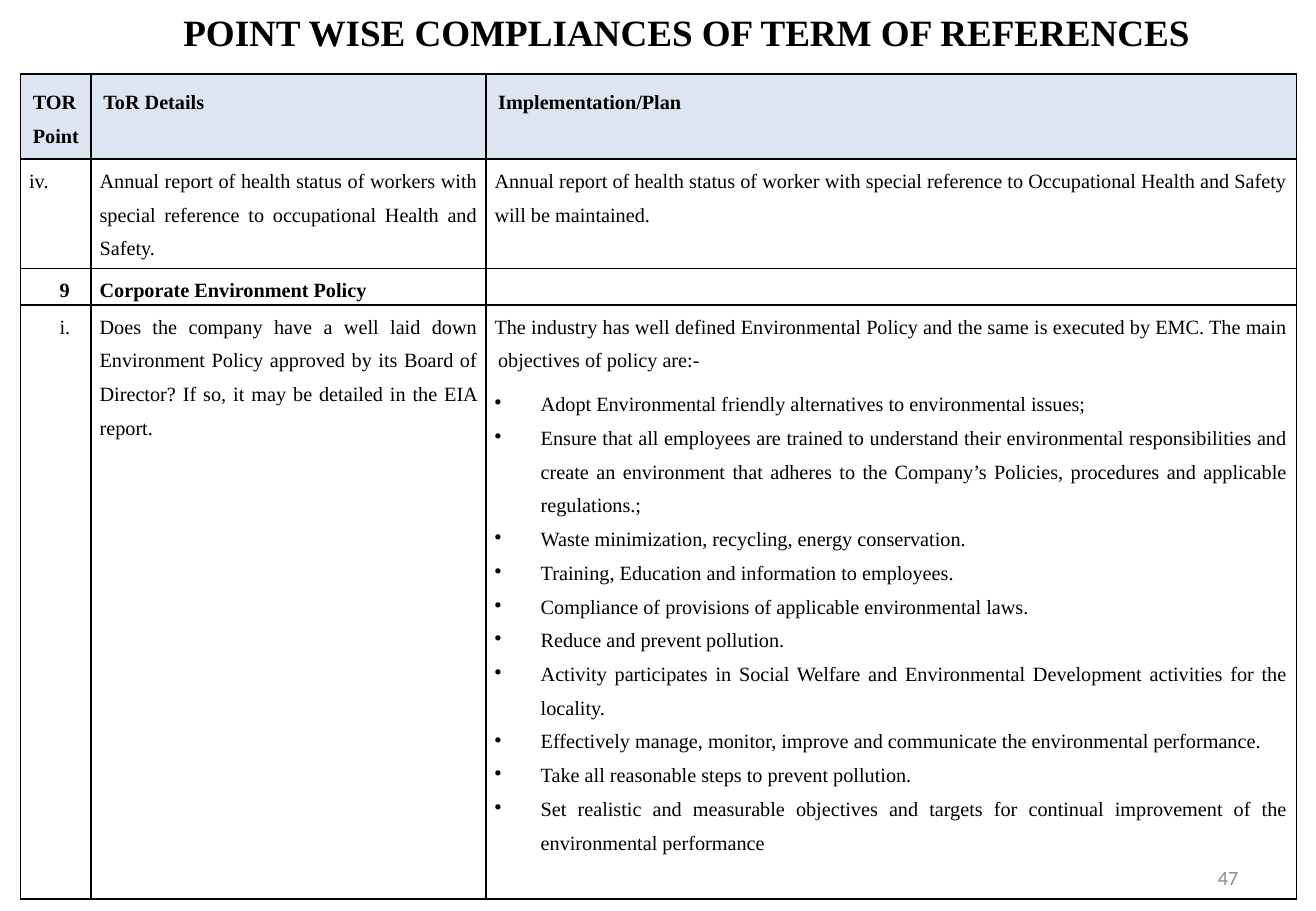
import pptx
import pptx.util
import pptx.dml.color
import pptx.enum.text
import pptx.oxml
from pptx.oxml.ns import qn

Inches = pptx.util.Inches
Pt = pptx.util.Pt
ALIGN = pptx.enum.text.PP_ALIGN
ANCHOR = pptx.enum.text.MSO_ANCHOR
COLOURS = {"ink": "000000", "header": "DCE6F2", "number": "8C8C8C"}
SERIF = "Times New Roman"

COLUMN_WIDTHS = [0.58, 3.25, 6.67]
ROW_HEIGHTS = [0.7, 0.9, 0.29, 4.89]
HEADINGS = ["TOR Point", "ToR Details", "Implementation/Plan"]
POLICY_INTRO = ("The industry has well defined Environmental Policy and the same is "
                "executed by EMC. The main objectives of policy are:-")
OBJECTIVES = [
    "Adopt Environmental friendly alternatives to environmental issues;",
    "Ensure that all employees are trained to understand their environmental "
    "responsibilities and create an environment that adheres to the Company’s "
    "Policies, procedures and applicable regulations.;",
    "Waste minimization, recycling, energy conservation.",
    "Training, Education and information to employees.",
    "Compliance of provisions of applicable environmental laws.",
    "Reduce and prevent pollution.",
    "Activity participates in Social Welfare and Environmental Development "
    "activities for the locality.",
    "Effectively manage, monitor, improve and communicate the environmental performance.",
    "Take all reasonable steps to prevent pollution.",
    "Set realistic and measurable objectives and targets for continual improvement "
    "of the environmental performance",
]


def colour(name):
    return pptx.dml.color.RGBColor.from_string(COLOURS[name])


def set_font(para, size, name=SERIF, ink="ink", bold=False):
    para.font.size = Pt(size)
    para.font.name = name
    para.font.bold = bold
    para.font.color.rgb = colour(ink)


def add_text(page, left, top, width, height, text, align, **font):
    box = page.shapes.add_textbox(Inches(left), Inches(top), Inches(width), Inches(height))
    box.text_frame.word_wrap = True
    para = box.text_frame.paragraphs[0]
    para.text = text
    para.alignment = align
    set_font(para, **font)
    return box


def set_borders(cell):
    properties = cell._tc.get_or_add_tcPr()
    for position, side in enumerate(("lnL", "lnR", "lnT", "lnB")):
        line = pptx.oxml.parse_xml(
            f'<a:{side} xmlns:a="http://schemas.openxmlformats.org/drawingml/2006/main" '
            f'w="{Pt(1)}"><a:solidFill><a:srgbClr val="{COLOURS["ink"]}"/>'
            f'</a:solidFill></a:{side}>')
        properties.insert(position, line)


def write_para(cell, text, align=ALIGN.LEFT, margin=0, indent=0, after=6,
               bullet=False, bold=False):
    """Fill the cell's first paragraph, or append one if it is already used."""
    frame = cell.text_frame
    para = frame.add_paragraph() if frame.text else frame.paragraphs[0]
    para.text = text
    para.alignment = align
    properties = para._p.get_or_add_pPr()
    properties.set("marL", str(Inches(margin)))
    properties.set("indent", str(Inches(indent)))
    if bullet:
        mark = pptx.oxml.parse_xml(
            '<a:buChar xmlns:a="http://schemas.openxmlformats.org/drawingml/2006/main" char="•"/>')
        properties.append(mark)
    para.line_spacing = 1.5
    para.space_after = Pt(after)
    set_font(para, 12, bold=bold)


def add_compliance_table(page):
    frame = page.shapes.add_table(len(ROW_HEIGHTS), len(COLUMN_WIDTHS), Inches(0.17),
                                  Inches(0.61), Inches(sum(COLUMN_WIDTHS)),
                                  Inches(sum(ROW_HEIGHTS)))
    table = frame.table
    table.first_row = table.horz_banding = False
    for column, width in zip(table.columns, COLUMN_WIDTHS):
        column.width = Inches(width)
    for index, (row, height) in enumerate(zip(table.rows, ROW_HEIGHTS)):
        row.height = Inches(height)
        for cell in row.cells:
            if index == 0:
                cell.fill.solid()
                cell.fill.fore_color.rgb = colour("header")
            else:
                cell.fill.background()
                cell.margin_left = cell.margin_right = Inches(0.07)
                cell.margin_top = cell.margin_bottom = 0
            set_borders(cell)
    return table


def main():
    deck = pptx.Presentation()
    deck.slide_width, deck.slide_height = Inches(10.83), Inches(7.5)
    page = deck.slides.add_slide(deck.slide_layouts[6])

    # Page number and title
    number = add_text(page, 7.76, 7.02, 2.53, 0.4, "47", ALIGN.RIGHT,
                      size=12, name="Calibri", ink="number")
    number.text_frame.vertical_anchor = ANCHOR.MIDDLE
    title = add_text(page, 0.55, 0.03, 10.2, 0.47,
                     "POINT WISE COMPLIANCES OF TERM OF REFERENCES", ALIGN.CENTER,
                     size=22, bold=True)
    title.text_frame.auto_size = pptx.enum.text.MSO_AUTO_SIZE.SHAPE_TO_FIT_TEXT

    # Table header
    table = add_compliance_table(page)
    for column, heading in enumerate(HEADINGS):
        write_para(table.cell(0, column), heading, after=0, bold=True)

    # Health status report
    write_para(table.cell(1, 0), "iv.")
    write_para(table.cell(1, 1), "Annual report of health status of workers with special "
               "reference to occupational Health and Safety.", ALIGN.JUSTIFY, after=10)
    write_para(table.cell(1, 2), "Annual report of health status of worker with special "
               "reference to Occupational Health and Safety will be maintained.", ALIGN.JUSTIFY)

    # Section heading
    write_para(table.cell(2, 0), "9", margin=0.25, bold=True)
    write_para(table.cell(2, 1), "Corporate Environment Policy", ALIGN.JUSTIFY, bold=True)
    set_font(table.cell(2, 2).text_frame.paragraphs[0], 12)

    # Environment policy and its objectives
    write_para(table.cell(3, 0), "i.", margin=0.25)
    write_para(table.cell(3, 1), "Does the company have a well laid down Environment Policy "
               "approved by its Board of Director? If so, it may be detailed in the EIA report.",
               ALIGN.JUSTIFY)
    policy = table.cell(3, 2)
    write_para(policy, POLICY_INTRO, ALIGN.JUSTIFY, margin=0.03, indent=-0.03)
    for objective in OBJECTIVES:
        write_para(policy, objective, ALIGN.JUSTIFY, margin=0.38, indent=-0.38,
                   after=0, bullet=True)

    deck.save("out.pptx")


if __name__ == "__main__":
    main()
